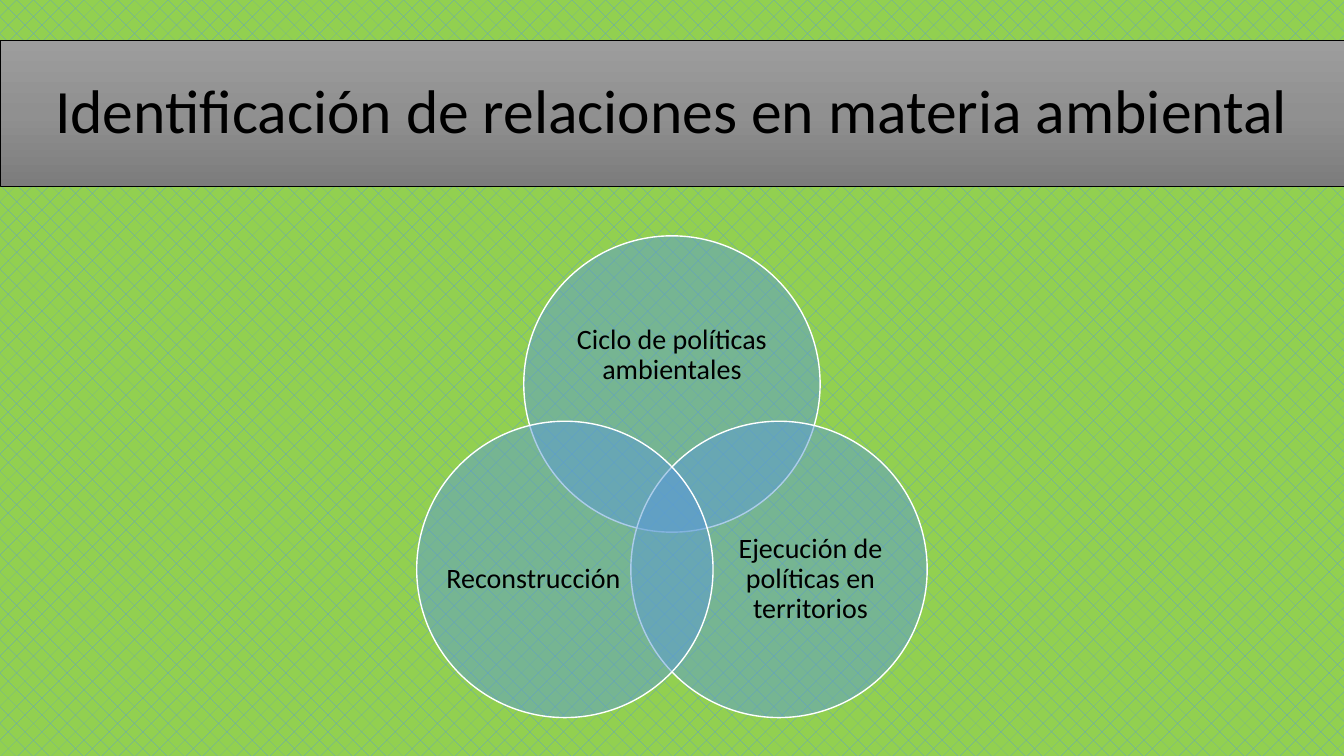
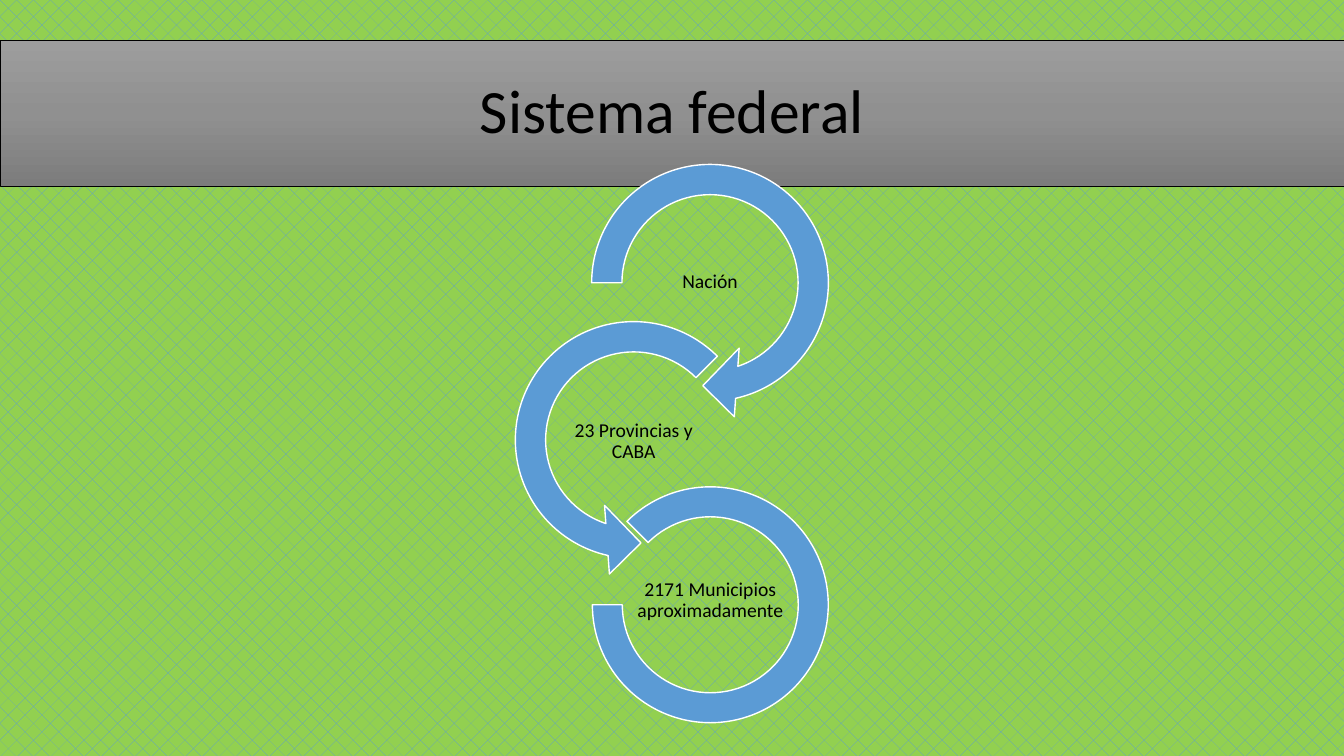
from copy import deepcopy
from dataclasses import dataclass
from math import cos, radians, sin

from lxml.etree import SubElement
from pptx import Presentation
from pptx.dml.color import RGBColor as RGB
from pptx.enum.dml import MSO_PATTERN
from pptx.enum.shapes import MSO_SHAPE as SHAPE
from pptx.enum.text import MSO_ANCHOR, PP_ALIGN
from pptx.oxml.ns import qn
from pptx.util import Pt


@dataclass(frozen=True)
class Theme:
    green: RGB = RGB(0x92, 0xD0, 0x50)
    blue: RGB = RGB(0x5B, 0x9B, 0xD5)
    white: RGB = RGB(0xFF, 0xFF, 0xFF)
    black: RGB = RGB(0, 0, 0)
    band_grays: tuple = (RGB(0x9D, 0x9D, 0x9D), RGB(0x90, 0x90, 0x90), RGB(0x7C, 0x7C, 0x7C))
    font: str = "Calibri"
    title_size: int = 44
    venn_size: int = 20
    ring_size: int = 14


THEME = Theme()
WIDTH, HEIGHT = 960, 540


class SlideBuilder:
    def __init__(self, theme):
        self.theme = theme
        self.page = None
        self.deck = Presentation()
        self.deck.slide_width, self.deck.slide_height = Pt(WIDTH), Pt(HEIGHT)
        fill = self.deck.slide_master.background.fill
        fill.patterned()
        fill.pattern = MSO_PATTERN.DOTTED_DIAMOND
        fill.fore_color.rgb = theme.blue
        fill.back_color.rgb = theme.green

    def add_page(self, title):
        self.page = self.deck.slides.add_slide(self.deck.slide_layouts[6])
        self.title_band(title)

    def shape(self, kind, left, top, width, height, line_color, line_width):
        shape = self.page.shapes.add_shape(kind, Pt(left), Pt(top), Pt(width), Pt(height))
        shape.shadow.inherit = False
        shape.line.color.rgb = line_color
        shape.line.width = Pt(line_width)
        return shape

    def set_text(self, shape, text, size):
        """Centre text in a shape or box, in the shared font."""
        frame = shape.text_frame
        frame.word_wrap = True
        frame.vertical_anchor = MSO_ANCHOR.MIDDLE
        para = frame.paragraphs[0]
        para.text = text
        para.alignment = PP_ALIGN.CENTER
        para.line_spacing = 0.9
        para.font.name = self.theme.font
        para.font.size = Pt(size)
        para.font.color.rgb = self.theme.black

    def title_band(self, title):
        band = self.shape(SHAPE.RECTANGLE, 0, 28.8, WIDTH, 104.4, self.theme.black, 0.5)
        band.fill.gradient()
        band.fill.gradient_angle = 270
        stops = next(band._element.spPr.iter(qn("a:gsLst")))
        stops.insert(1, deepcopy(stops[0]))
        for stop, position, gray in zip(band.fill.gradient_stops, (0, 0.5, 1), self.theme.band_grays):
            stop.position = position
            stop.color.rgb = gray
        self.set_text(band, title, self.theme.title_size)

    def label(self, text, center_x, center_y, width, height, size):
        box = self.page.shapes.add_textbox(
            Pt(center_x - width / 2), Pt(center_y - height / 2), Pt(width), Pt(height))
        frame = box.text_frame
        frame.margin_left = frame.margin_top = frame.margin_right = frame.margin_bottom = 0
        self.set_text(box, text, size)

    def round_shape(self, kind, center_x, center_y, diameter, adjustments=(), alpha=None):
        """Blue shape with a white outline; alpha is a percentage."""
        shape = self.shape(kind, center_x - diameter / 2, center_y - diameter / 2,
                           diameter, diameter, self.theme.white, 1)
        shape.fill.solid()
        shape.fill.fore_color.rgb = self.theme.blue
        for index, value in enumerate(adjustments):
            shape.adjustments[index] = value
        if alpha is not None:
            color = shape._element.spPr.find(qn("a:solidFill"))[0]
            SubElement(color, qn("a:alpha"), val=str(alpha * 1000))


def venn_slide(builder):
    builder.add_page("Identificación de relaciones en materia ambiental")
    diameter, orbit, middle_y = 211.7, 88.3, 362.6
    circles = (
        # angle, text, label offset from circle centre, label size
        (-90, "Ciclo de políticas ambientales", (0, -20.5), (155.5, 95)),
        (30, "Ejecución de políticas en territorios", (22.5, 7.2), (127.4, 116.6)),
        (150, "Reconstrucción", (-22.5, 7.2), (127.4, 116.6)),
    )
    for angle, text, (shift_x, shift_y), (width, height) in circles:
        x = WIDTH / 2 + orbit * cos(radians(angle))
        y = middle_y + orbit * sin(radians(angle))
        builder.round_shape(SHAPE.OVAL, x, y, diameter, alpha=50)
        builder.label(text, x + shift_x, y + shift_y, width, height, builder.theme.venn_size)


def federal_slide(builder):
    builder.add_page("Sistema federal")
    arrow, arc = 196.6, 168.5
    rings = (
        (SHAPE.CIRCULAR_ARROW, 507.2, 202, arrow, (0.11, 11.42, 45, 108, 0.125),
         "Nación"),
        (SHAPE.LEFT_CIRCULAR_ARROW, 452.7, 314.3, arrow, (0.11, 11.42, 63, 189, 0.125),
         "23 Provincias y CABA"),
        (SHAPE.BLOCK_ARC, 507.4, 432, arc, (135, 108, 0.127),
         "2171 Municipios aproximadamente"),
    )
    for row, (kind, x, y, diameter, adjustments, text) in enumerate(rings):
        builder.round_shape(kind, x, y, diameter, adjustments)
        builder.label(text, x, 201.6 + 113.8 * row, 108, 54, builder.theme.ring_size)


def main():
    builder = SlideBuilder(THEME)
    venn_slide(builder)
    federal_slide(builder)
    builder.deck.save("out.pptx")


if __name__ == "__main__":
    main()
